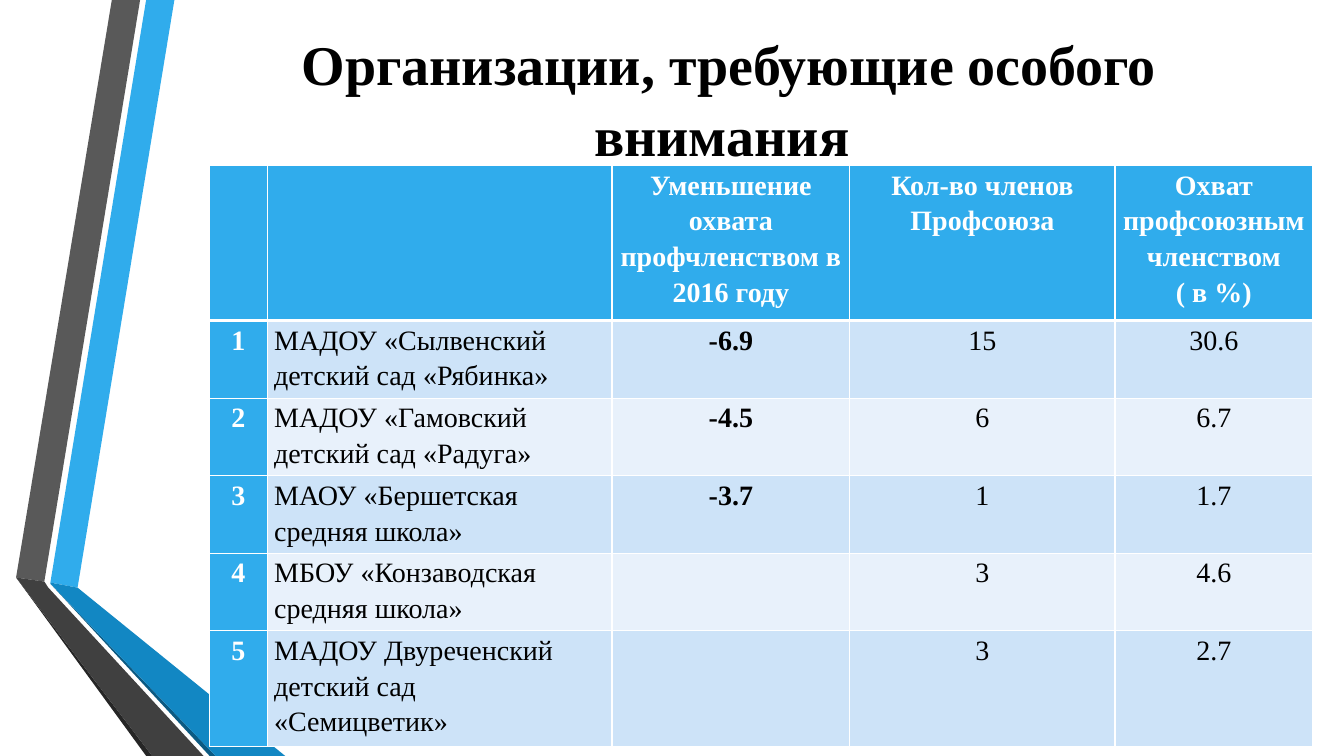
"""Build a slide with a folded ribbon, a title and a table of organisations."""
from dataclasses import dataclass

import lxml.etree
import pptx
import pptx.dml.color
import pptx.enum.text
import pptx.oxml.ns
import pptx.util


@dataclass(frozen=True)
class Theme:
    """Colours, font and type sizes of the slide."""
    font: str = "Times New Roman"
    title_size: int = 40
    table_size: int = 20
    title_spacing: float = 1.05
    table_spacing: float = 1.15
    black: str = "000000"
    white: str = "FFFFFF"
    blue: str = "30ACEC"
    blue_fold: str = "1287C3"
    blue_edge: str = "0C5A82"
    gray: str = "595959"
    gray_fold: str = "404040"
    gray_edge: str = "262626"
    bands: tuple = ("CDE3F8", "E8F1FB")
    thin: int = 1
    thick: int = 3


@dataclass(frozen=True)
class Box:
    """A rectangle in inches."""
    left: float
    top: float
    width: float
    height: float

    def emu(self):
        """Return the four lengths in slide units."""
        return [pptx.util.Inches(length) for length in (self.left, self.top, self.width, self.height)]


THEME = Theme()
SLIDE = Box(0, 0, 13.33, 7.5)
RIBBON_BOX = Box(0.16, 0, 2.67, 7.5)
TITLE_BOX = Box(1.75, 0, 10.96, 1.92)
TABLE_BOX = Box(2.08, 1.64, 10.94, 5.73)

RIBBON_GRID = (267, 750)
RIBBON_PARTS = [
    (THEME.blue, [(34, 578), (61, 583), (157, 0), (129, 0)]),
    (THEME.gray, [(123, 0), (95, 0), (0, 573), (28, 577)]),
    (THEME.gray_edge, [(0, 573), (129, 750), (135, 750)]),
    (THEME.blue_edge, [(34, 579), (192, 750), (198, 750)]),
    (THEME.blue_fold, [(34, 579), (198, 750), (267, 750), (61, 583), (34, 578)]),
    (THEME.gray_fold, [(186, 750), (32, 583), (28, 577), (0, 573), (135, 750)]),
]

COLUMN_SHARES = (57, 342, 236, 263, 196)
ROW_SHARES = (154, 77, 77, 77, 77, 111)
NUMBER_COLUMN, NAME_COLUMN, CHANGE_COLUMN = range(3)
ROWS = [
    ("", "", "Уменьшение охвата профчленством в 2016 году", "Кол-во членов Профсоюза",
     "Охват профсоюзным членством\n( в %)"),
    ("1", "МАДОУ «Сылвенский\nдетский сад «Рябинка»", "-6.9", "15", "30.6"),
    ("2", "МАДОУ «Гамовский детский сад «Радуга»", "-4.5", "6", "6.7"),
    ("3", "МАОУ «Бершетская средняя школа»", "-3.7", "1", "1.7"),
    ("4", "МБОУ «Конзаводская средняя школа»", "", "3", "4.6"),
    ("5", "МАДОУ Двуреченский детский сад\n«Семицветик»", "", "3", "2.7"),
]


def paint(fill, color):
    """Give a fill one solid colour."""
    fill.solid()
    fill.fore_color.rgb = pptx.dml.color.RGBColor.from_string(color)


def write(frame, text, size, color, bold, spacing, centered=True):
    """Set the text of a frame and format its paragraphs and runs."""
    frame.text = text
    align = pptx.enum.text.PP_ALIGN
    for para in frame.paragraphs:
        para.alignment = align.CENTER if centered else align.LEFT
        para.line_spacing = spacing
        for span in para.runs:
            span.font.name = THEME.font
            span.font.size = pptx.util.Pt(size)
            span.font.bold = bold
            span.font.color.rgb = pptx.dml.color.RGBColor.from_string(color)


def set_borders(cell, widths):
    """Draw the left, right, top and bottom borders of a cell in white."""
    properties = cell._tc.get_or_add_tcPr()
    for index, (side, width) in enumerate(zip("LRTB", widths)):
        line = lxml.etree.Element(pptx.oxml.ns.qn(f"a:ln{side}"), w=str(pptx.util.Pt(width)))
        solid = lxml.etree.SubElement(line, pptx.oxml.ns.qn("a:solidFill"))
        lxml.etree.SubElement(solid, pptx.oxml.ns.qn("a:srgbClr"), val=THEME.white)
        properties.insert(index, line)


def add_ribbon(page, box):
    """Draw the folded ribbon from its grid points."""
    left, top, width, height = box.emu()
    scale = (width / RIBBON_GRID[0], height / RIBBON_GRID[1])
    for color, points in RIBBON_PARTS:
        builder = page.shapes.build_freeform(*points[0], scale=scale)
        builder.add_line_segments(points[1:], close=True)
        part = builder.convert_to_shape(left, top)
        paint(part.fill, color)
        part.line.fill.background()
        part.shadow.inherit = False


def add_title(page, box):
    """Place the centred title."""
    frame = page.shapes.add_textbox(*box.emu()).text_frame
    frame.word_wrap = True
    frame.vertical_anchor = pptx.enum.text.MSO_ANCHOR.MIDDLE
    write(frame, "Организации, требующие особого внимания ", THEME.title_size,
          THEME.black, True, THEME.title_spacing)


def fill_cell(cell, row, column, text):
    """Style one table cell by its row and column."""
    accent = row == 0 or column == NUMBER_COLUMN
    cell.margin_left = cell.margin_right = pptx.util.Inches(0.07)
    cell.margin_top = cell.margin_bottom = 0
    write(cell.text_frame, text, THEME.table_size, THEME.white if accent else THEME.black,
          accent or column == CHANGE_COLUMN, THEME.table_spacing, column != NAME_COLUMN)
    paint(cell.fill, THEME.blue if accent else THEME.bands[(row - 1) % 2])
    top = THEME.thick if row == 1 else THEME.thin
    bottom = THEME.thick if row == 0 else THEME.thin
    set_borders(cell, (THEME.thin, THEME.thin, top, bottom))


def add_organisations(page, box):
    """Place the table of organisations."""
    left, top, width, height = box.emu()
    table = page.shapes.add_table(len(ROWS), len(COLUMN_SHARES), left, top, width, height).table
    for column, share in zip(table.columns, COLUMN_SHARES):
        column.width = int(width * share / sum(COLUMN_SHARES))
    for row, share in zip(table.rows, ROW_SHARES):
        row.height = int(height * share / sum(ROW_SHARES))
    for row, texts in enumerate(ROWS):
        for column, text in enumerate(texts):
            fill_cell(table.cell(row, column), row, column, text)


def main():
    """Build and save the deck."""
    deck = pptx.Presentation()
    deck.slide_width = pptx.util.Inches(SLIDE.width)
    deck.slide_height = pptx.util.Inches(SLIDE.height)
    page = deck.slides.add_slide(deck.slide_layouts[6])
    add_ribbon(page, RIBBON_BOX)
    add_title(page, TITLE_BOX)
    add_organisations(page, TABLE_BOX)
    deck.save("out.pptx")


if __name__ == "__main__":
    main()
